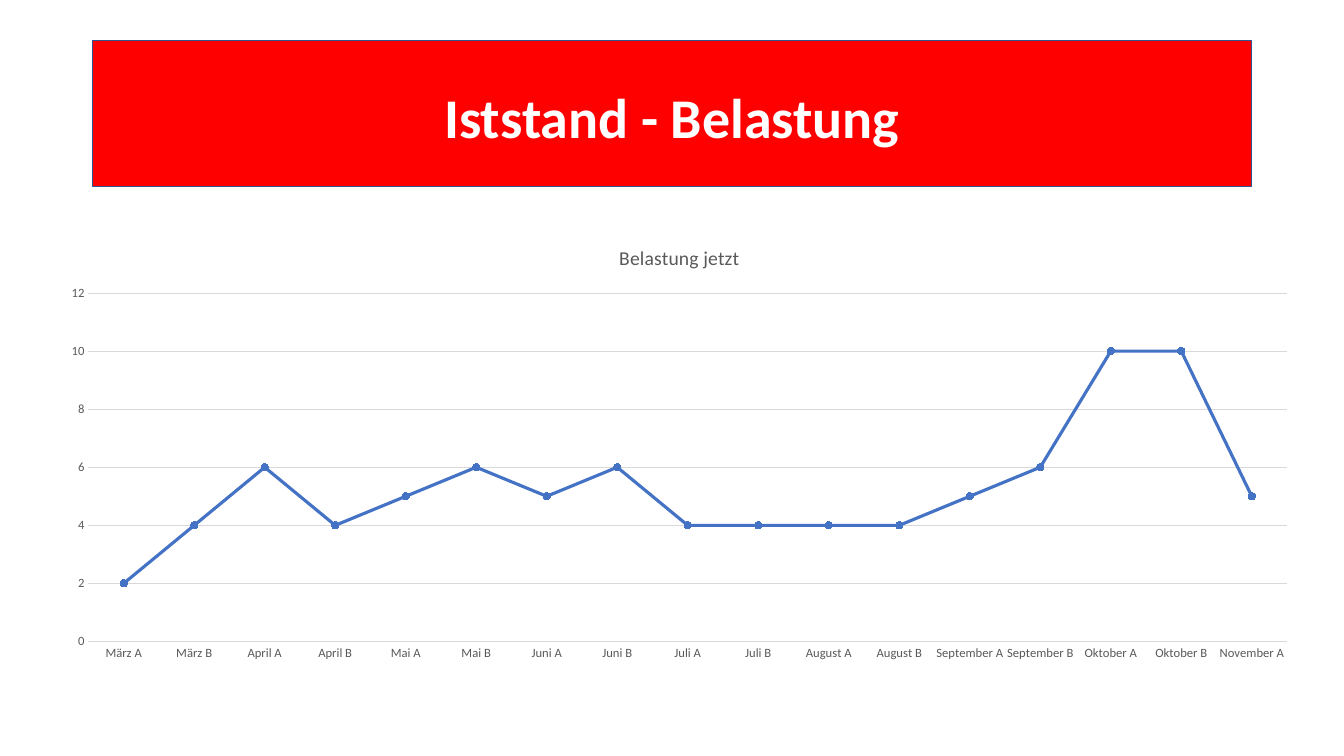
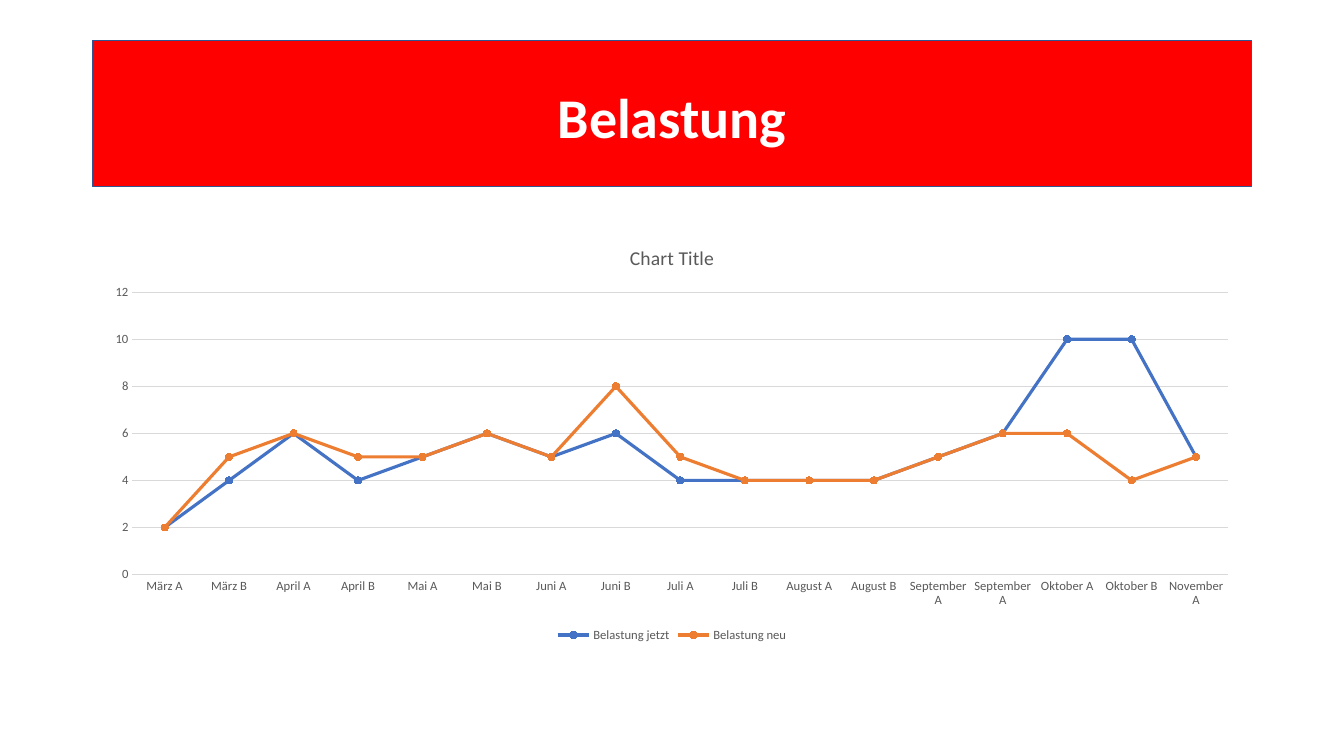
import pptx
import pptx.chart.data
import pptx.dml.color
import pptx.enum.chart
import pptx.enum.shapes
import pptx.enum.text
import pptx.util

RGBColor = pptx.dml.color.RGBColor
Pt = pptx.util.Pt

# Shared style
RED = RGBColor(0xFF, 0x00, 0x00)
NAVY = RGBColor(0x32, 0x54, 0x91)
WHITE = RGBColor(0xFF, 0xFF, 0xFF)
GRAY = RGBColor(0x59, 0x59, 0x59)
GRID = RGBColor(0xD9, 0xD9, 0xD9)
BLUE = RGBColor(0x44, 0x72, 0xC4)
ORANGE = RGBColor(0xED, 0x7D, 0x31)
FONT = "Calibri"

# Slide size in inches; positions are percentages of it
WIDTH, HEIGHT = 13.33, 7.5
MARGIN = 6.88
BAND = (MARGIN, 5.33, 100 - 2 * MARGIN, 19.33)
WIDE_CHART = (3.45, 30, 94.2, 58.5)
INSET_CHART = (MARGIN, 30, 100 - 2 * MARGIN, 55.5)

# Chart data
MONTHS = ["März", "April", "Mai", "Juni", "Juli", "August", "September", "Oktober"]
PERIODS = [f"{month} {half}" for month in MONTHS for half in "AB"] + ["November A"]
PERIODS_NEW = ["September A" if p == "September B" else p for p in PERIODS]
LOAD_NOW = ("Belastung jetzt", [2, 4, 6, 4, 5, 6, 5, 6, 4, 4, 4, 4, 5, 6, 10, 10, 5], BLUE)
LOAD_NEW = ("Belastung neu", [2, 5, 6, 5, 5, 6, 5, 8, 5, 4, 4, 4, 5, 6, 6, 4, 5], ORANGE)


def place(box):
    """Turn percentages of the slide into left, top, width and height."""
    return [pptx.util.Inches(share * side / 100)
            for share, side in zip(box, (WIDTH, HEIGHT) * 2)]


def set_font(font, size, color, bold=False):
    font.name, font.size, font.bold = FONT, Pt(size), bold
    font.color.rgb = color


def set_line(line, color, width):
    line.color.rgb = color
    line.width = Pt(width)


def add_title_band(s, text):
    band = s.shapes.add_shape(pptx.enum.shapes.MSO_SHAPE.RECTANGLE, *place(BAND))
    band.shadow.inherit = False
    band.fill.solid()
    band.fill.fore_color.rgb = RED
    set_line(band.line, NAVY, 1)
    tf = band.text_frame
    tf.word_wrap = True
    tf.vertical_anchor = pptx.enum.text.MSO_ANCHOR.MIDDLE
    p = tf.paragraphs[0]
    p.text = text
    p.alignment = pptx.enum.text.PP_ALIGN.CENTER
    p.line_spacing = 1.07
    p.space_after = Pt(8)
    set_font(p.font, 40, WHITE, bold=True)


def style_axes(chart):
    for axis in (chart.category_axis, chart.value_axis):
        axis.major_tick_mark = pptx.enum.chart.XL_TICK_MARK.NONE
        axis.minor_tick_mark = pptx.enum.chart.XL_TICK_MARK.NONE
        set_font(axis.tick_labels.font, 9, GRAY)
    set_line(chart.category_axis.format.line, GRID, 0.75)
    values = chart.value_axis
    values.minimum_scale, values.maximum_scale, values.major_unit = 0, 12, 2
    values.format.line.fill.background()
    values.has_major_gridlines = True
    set_line(values.major_gridlines.format.line, GRID, 0.75)


def style_series(series, color):
    series.smooth = False
    set_line(series.format.line, color, 2.25)
    marker = series.marker
    marker.style = pptx.enum.chart.XL_MARKER_STYLE.CIRCLE
    marker.size = 5
    marker.format.fill.solid()
    marker.format.fill.fore_color.rgb = color
    set_line(marker.format.line, color, 0.75)


def add_line_chart(s, box, title, periods, loads):
    data = pptx.chart.data.CategoryChartData()
    data.categories = periods
    for name, values, _ in loads:
        data.add_series(name, values)
    kind = pptx.enum.chart.XL_CHART_TYPE.LINE_MARKERS
    chart = s.shapes.add_chart(kind, *place(box), data).chart
    chart.font.name, chart.font.size = FONT, Pt(10)
    chart.plots[0].vary_by_categories = False

    # Title
    chart.has_title = True
    p = chart.chart_title.text_frame.paragraphs[0]
    p.text = title
    set_font(p.font, 14, GRAY)
    chart.chart_title.include_in_layout = False

    # Axes and lines
    style_axes(chart)
    for series, (_, _, color) in zip(chart.plots[0].series, loads):
        style_series(series, color)

    # Legend only where several lines need telling apart
    chart.has_legend = len(loads) > 1
    if chart.has_legend:
        chart.legend.position = pptx.enum.chart.XL_LEGEND_POSITION.BOTTOM
        chart.legend.include_in_layout = False
        set_font(chart.legend.font, 9, GRAY)


def add_chart_slide(prs, heading, *chart_args):
    s = prs.slides.add_slide(prs.slide_layouts[6])
    add_title_band(s, heading)
    add_line_chart(s, *chart_args)


def main():
    prs = pptx.Presentation()
    prs.slide_width = pptx.util.Inches(WIDTH)
    prs.slide_height = pptx.util.Inches(HEIGHT)
    add_chart_slide(prs, "Iststand - Belastung",
                    WIDE_CHART, "Belastung jetzt", PERIODS, [LOAD_NOW])
    add_chart_slide(prs, "Belastung",
                    INSET_CHART, "Chart Title", PERIODS_NEW, [LOAD_NOW, LOAD_NEW])
    prs.save("out.pptx")


if __name__ == "__main__":
    main()
